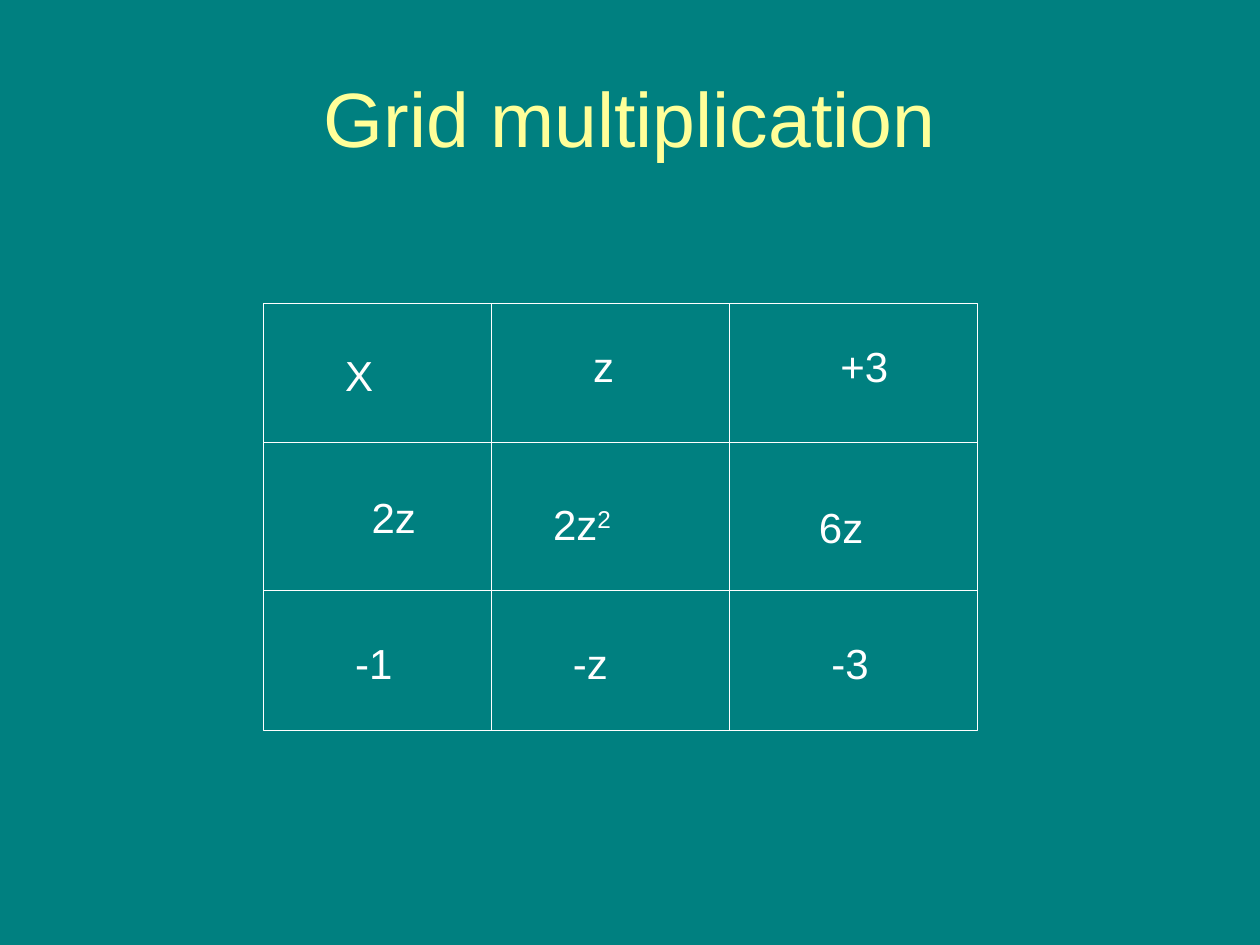
from lxml import etree
from pptx import Presentation
from pptx.dml.color import RGBColor
from pptx.enum.shapes import MSO_CONNECTOR, MSO_SHAPE
from pptx.enum.text import MSO_ANCHOR, MSO_AUTO_SIZE, PP_ALIGN
from pptx.oxml.ns import qn
from pptx.util import Cm, Pt

RECTANGLE = MSO_SHAPE.RECTANGLE
STRAIGHT = MSO_CONNECTOR.STRAIGHT
CENTER = PP_ALIGN.CENTER
MIDDLE = MSO_ANCHOR.MIDDLE
FIT_SHAPE = MSO_AUTO_SIZE.SHAPE_TO_FIT_TEXT

COLORS = {"background": "008080", "title": "FFFF99", "ink": "FFFFFF"}
FONT = "Arial"
LINE_WIDTH = Pt(0.75)
TERM_HEIGHT = 1.27

# Grid edges and inner divisions, in cm
LEFT, RIGHT, TOP, BOTTOM = 5.31, 19.71, 6.12, 14.73
COLUMN_LINES = (9.91, 14.71)
ROW_LINES = (8.92, 11.91)

# Grid terms: text, superscript, left, top, width, wrap
TERMS = [
    ("X", "", 6.71, 6.93, 1.24, True),
    ("z", "", 11.71, 6.73, 1.98, True),
    ("+3", "", 16.69, 6.73, 1.47, False),
    ("2z", "", 7.24, 9.78, 1.4, False),
    ("2z", "2", 10.9, 9.93, 3.2, True),
    ("6z", "", 16.26, 9.98, 1.4, False),
    ("-1", "", 6.91, 12.73, 1.27, False),
    ("-z", "", 11.3, 12.73, 1.22, False),
    ("-3", "", 16.51, 12.73, 1.27, False),
]


def color(name):
    return RGBColor.from_string(COLORS[name])


def style_line(line):
    line.color.rgb = color("ink")
    line.width = LINE_WIDTH


def add_text(page, text, left, top, width, height, size, color_name):
    box = page.shapes.add_textbox(Cm(left), Cm(top), Cm(width), Cm(height))
    box.text_frame.text = text
    box.text_frame.word_wrap = True
    para = box.text_frame.paragraphs[0]
    para.font.name = FONT
    format_span(para.runs[0], size, color_name)
    return box


def format_span(span, size, color_name):
    span.font.name = FONT
    span.font.size = Pt(size)
    span.font.color.rgb = color(color_name)


def add_title(page, text):
    box = add_text(page, text, 1.27, 0.76, 22.86, 3.18, 44, "title")
    box.text_frame.vertical_anchor = MIDDLE
    box.text_frame.paragraphs[0].alignment = CENTER


def add_frame(page):
    frame = page.shapes.add_shape(
        RECTANGLE, Cm(LEFT), Cm(TOP), Cm(RIGHT - LEFT), Cm(BOTTOM - TOP))
    frame.shadow.inherit = False
    frame.fill.solid()
    frame.fill.fore_color.rgb = color("background")
    style_line(frame.line)


def add_division(page, x1, y1, x2, y2):
    division = page.shapes.add_connector(STRAIGHT, Cm(x1), Cm(y1), Cm(x2), Cm(y2))
    style_line(division.line)
    etree.SubElement(division._element.spPr, qn("a:effectLst"))


def add_term(page, text, superscript, left, top, width, wrap):
    box = add_text(page, text, left, top, width, TERM_HEIGHT, 24, "ink")
    box.text_frame.word_wrap = wrap
    box.text_frame.auto_size = FIT_SHAPE
    if superscript:
        span = box.text_frame.paragraphs[0].add_run()
        span.text = superscript
        format_span(span, 24, "ink")
        span.font._element.set("baseline", "30000")


def main():
    deck = Presentation()
    deck.slide_width, deck.slide_height = Cm(25.4), Cm(19.05)
    page = deck.slides.add_slide(deck.slide_layouts[6])
    page.background.fill.solid()
    page.background.fill.fore_color.rgb = color("background")

    add_title(page, "Grid multiplication")

    # Three by three grid
    add_frame(page)
    for x in COLUMN_LINES:
        add_division(page, x, TOP, x, BOTTOM)
    for y in ROW_LINES:
        add_division(page, LEFT, y, RIGHT, y)

    # Factors and products
    for term in TERMS:
        add_term(page, *term)

    deck.save("out.pptx")


if __name__ == "__main__":
    main()
